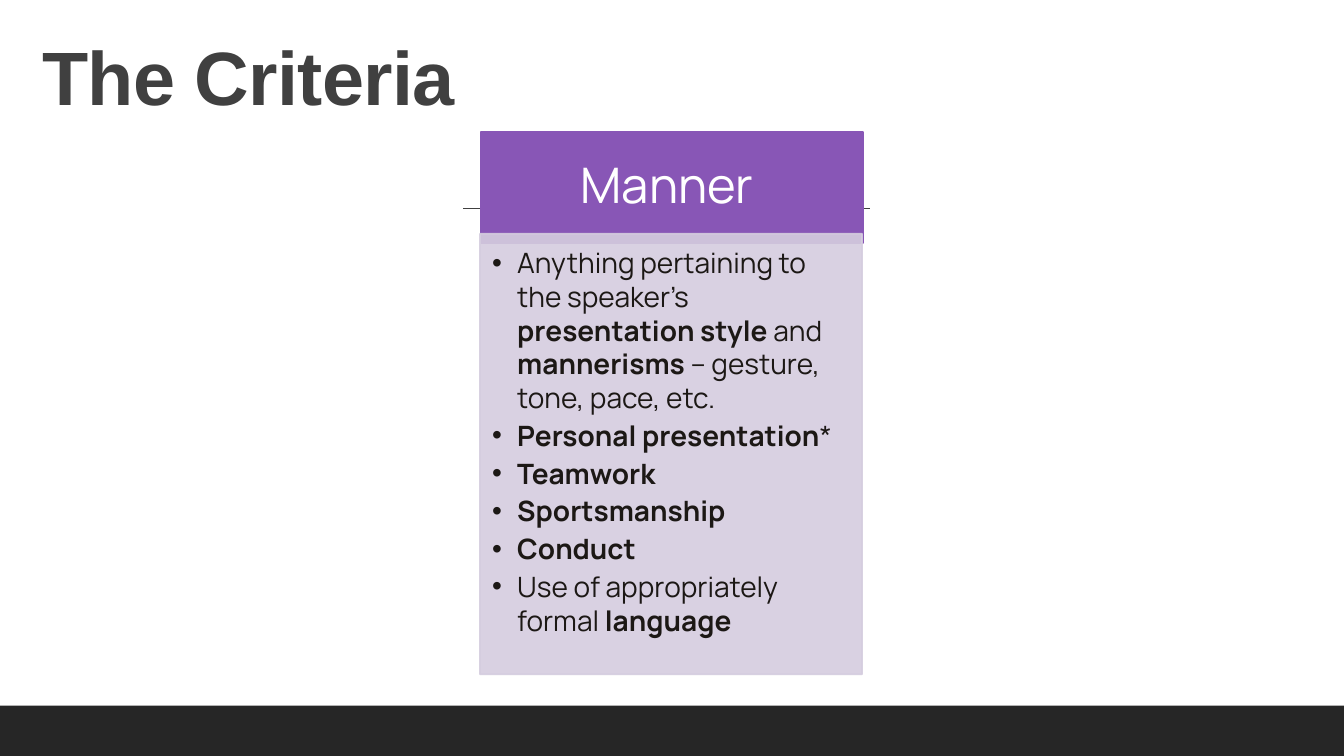
import pptx
import pptx.util
import pptx.dml.color
import pptx.enum.shapes
import pptx.enum.text
import lxml.etree
from pptx.util import Inches

MAIN = "{http://schemas.openxmlformats.org/drawingml/2006/main}"


def color(value):
    return pptx.dml.color.RGBColor.from_string(value)


def add_panel(left, top, width, height, fill, insets=(0.1, 0.1, 0.1, 0.1)):
    panel = page.shapes.add_shape(
        pptx.enum.shapes.MSO_SHAPE.RECTANGLE,
        Inches(left), Inches(top), Inches(width), Inches(height))
    panel.shadow.inherit = False
    panel.fill.solid()
    panel.fill.fore_color.rgb = color(fill)
    panel.line.color.rgb = color(fill)
    panel.line.width = pptx.util.Pt(1.25)
    frame = panel.text_frame
    frame.word_wrap = True
    frame.margin_left, frame.margin_top, frame.margin_right, frame.margin_bottom = map(Inches, insets)
    return panel


deck = pptx.Presentation()
deck.slide_width = Inches(13.33)
deck.slide_height = Inches(7.5)
page = deck.slides.add_slide(deck.slide_layouts[5])

title = page.shapes.title
title.left, title.top = Inches(0.32), Inches(0.3)
title.width, title.height = Inches(11.48), Inches(1.83)
frame = title.text_frame
frame.text = "The Criteria"
frame.word_wrap = True
frame.auto_size = pptx.enum.text.MSO_AUTO_SIZE.NONE
frame.vertical_anchor = pptx.enum.text.MSO_ANCHOR.TOP
frame.margin_left = frame.margin_top = frame.margin_right = frame.margin_bottom = Inches(0.1)
para = frame.paragraphs[0]
para.alignment = pptx.enum.text.PP_ALIGN.LEFT
para.line_spacing = 0.9
para.font.name = "Arial"
para.font.size = pptx.util.Pt(54)
para.font.bold = True
para.font.color.rgb = color("404040")
para.runs[0].font._element.set("spc", "-50")

footer = add_panel(0, 7, 13.33, 0.5, "262626")
footer.line.fill.background()

rule = page.shapes.add_connector(
    pptx.enum.shapes.MSO_CONNECTOR.STRAIGHT,
    Inches(1.31), Inches(2.07), Inches(12.21), Inches(2.07))
rule.line.color.rgb = color("404040")
rule.line.width = pptx.util.Pt(1)
lxml.etree.SubElement(rule._element.spPr, MAIN + "effectLst")

header = add_panel(4.77, 1.31, 3.79, 1.1, "8856B6", (0.27, 0.16, 0.27, 0.16))
header.text_frame.vertical_anchor = pptx.enum.text.MSO_ANCHOR.MIDDLE
para = header.text_frame.paragraphs[0]
para.text = "Manner "
para.alignment = pptx.enum.text.PP_ALIGN.CENTER
para.line_spacing = 0.9
para.font.name = "Manrope"
para.font.size = pptx.util.Pt(35)
para.font.color.rgb = color("FFFFFF")

body = add_panel(4.76, 2.32, 3.79, 4.37, "D5CDDF", (0.12, 0.12, 0.16, 0.17))
body.text_frame.vertical_anchor = pptx.enum.text.MSO_ANCHOR.TOP
for shade in body._element.spPr.iter(MAIN + "srgbClr"):
    lxml.etree.SubElement(shade, MAIN + "alpha", val="90000")

criteria = [
    [("Anything pertaining to the speaker’s ", False), ("presentation style", True),
     (" and ", False), ("mannerisms", True), (" – gesture, tone, pace, etc.", False)],
    [("Personal presentation", True), ("*", False)],
    [("Teamwork", True)],
    [("Sportsmanship", True)],
    [("Conduct", True)],
    [("Use of appropriately formal ", False), ("language", True)],
]
for index, criterion in enumerate(criteria):
    para = body.text_frame.add_paragraph() if index else body.text_frame.paragraphs[0]
    para.alignment = pptx.enum.text.PP_ALIGN.LEFT
    para.line_spacing = 1.0
    para.space_after = pptx.util.Pt(3)
    properties = para._p.get_or_add_pPr()
    properties.set("marL", str(Inches(0.25)))
    properties.set("indent", str(Inches(-0.25)))
    lxml.etree.SubElement(properties, MAIN + "buFont", typeface="Arial")
    lxml.etree.SubElement(properties, MAIN + "buChar", char="•")
    para.font.name = "Manrope"
    para.font.size = pptx.util.Pt(20)
    para.font.color.rgb = color("1C1815")
    for text, bold in criterion:
        span = para.add_run()
        span.text = text
        span.font.bold = bold

for left, top in [(0.21, 1.21), (8.64, 1.11)]:
    add_panel(left, top, 4.37, 5.77, "FFFFFF")

deck.save("out.pptx")
